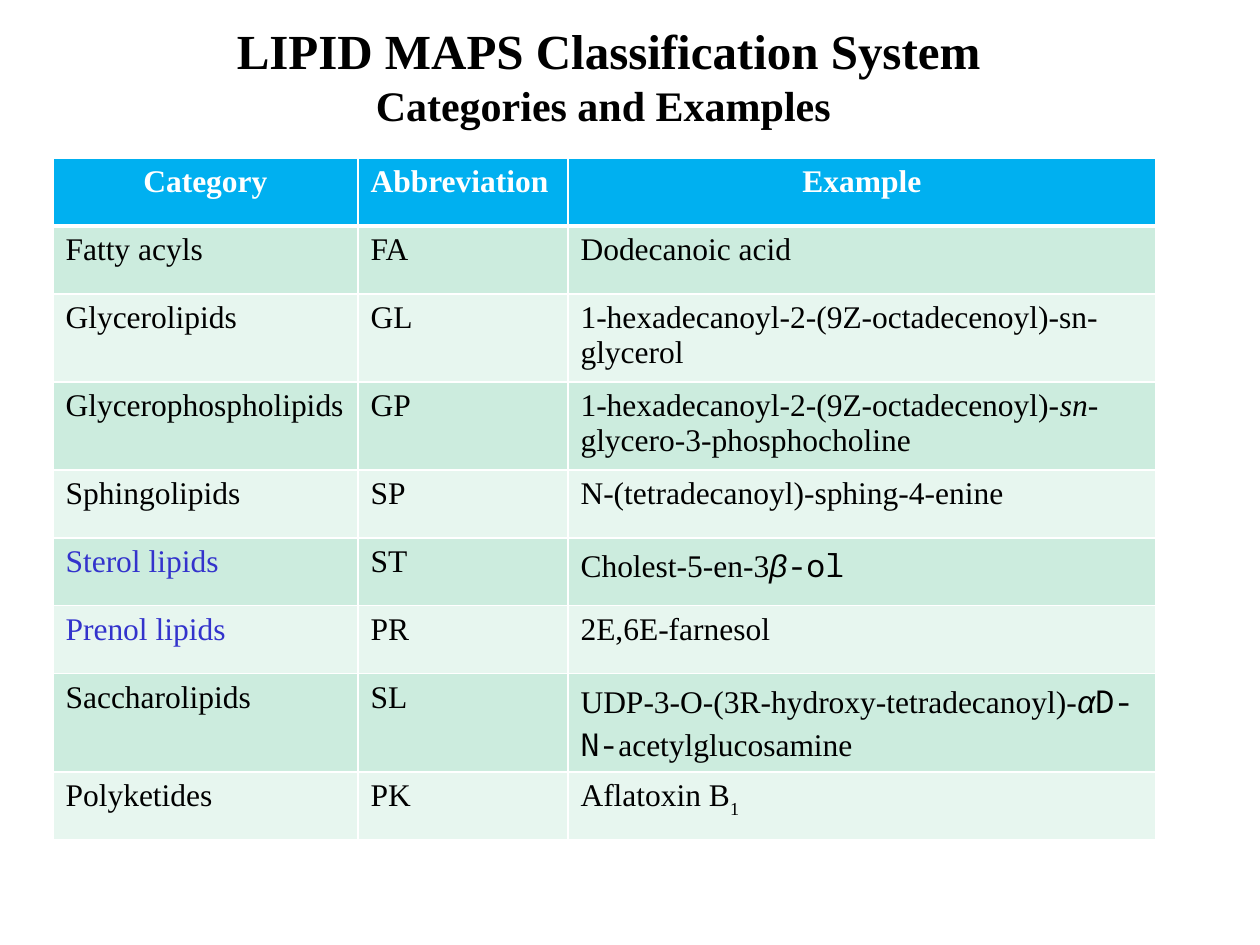
import dataclasses

import pptx
import pptx.dml.color
import pptx.enum.text
import pptx.oxml.ns
import pptx.util
from lxml import etree


@dataclasses.dataclass(frozen=True)
class Theme:
    serif: str = "Times New Roman"
    greek: str = "Arial"
    mono: str = "Noto Sans Mono"
    ink: str = "000000"
    white: str = "FFFFFF"
    accent: str = "3333CC"
    header: str = "00B0F0"
    dark_band: str = "CCECDE"
    light_band: str = "E7F6EF"
    title_size: int = 28
    subtitle_size: int = 24
    body_size: int = 18


THEME = Theme()
PX = 914400 / 126
CENTER = pptx.enum.text.PP_ALIGN.CENTER
LEFT = pptx.enum.text.PP_ALIGN.LEFT


def style_font(font, size, color, bold):
    font.name = THEME.serif
    font.size = pptx.util.Pt(size)
    font.bold = bold
    font.color.rgb = pptx.dml.color.RGBColor.from_string(color)


def add_borders(cell, top, bottom):
    properties = cell._tc.get_or_add_tcPr()
    widths = {"lnL": 1, "lnR": 1, "lnT": top, "lnB": bottom}
    for index, (side, width) in enumerate(widths.items()):
        line = etree.Element(pptx.oxml.ns.qn(f"a:{side}"), w=str(pptx.util.Pt(width)))
        fill = etree.SubElement(line, pptx.oxml.ns.qn("a:solidFill"))
        etree.SubElement(fill, pptx.oxml.ns.qn("a:srgbClr"), val=THEME.white)
        properties.insert(index, line)


deck = pptx.Presentation()
deck.slide_width = round(1260 * PX)
deck.slide_height = round(945 * PX)
page = deck.slides.add_slide(deck.slide_layouts[5])

title = page.shapes.title
title.left, title.top, title.width, title.height = (
    round(length * PX) for length in (73, 53, 1071, 44)
)
title.text_frame.auto_size = pptx.enum.text.MSO_AUTO_SIZE.NONE
title.text_frame.vertical_anchor = pptx.enum.text.MSO_ANCHOR.MIDDLE
para = title.text_frame.paragraphs[0]
para.alignment = CENTER
style_font(para.font, THEME.title_size, THEME.ink, True)
heading = para.add_run()
heading.text = "LIPID MAPS Classification System"
style_font(heading.font, THEME.title_size, THEME.ink, True)
para.add_line_break()
subheading = para.add_run()
subheading.text = "Categories and Examples "
style_font(subheading.font, THEME.subtitle_size, THEME.ink, True)

lipids = [
    ("Category", "Abbreviation", [("Example", "")]),
    ("Fatty acyls", "FA", [("Dodecanoic acid", "")]),
    ("Glycerolipids", "GL", [("1-hexadecanoyl-2-(9Z-octadecenoyl)-sn-glycerol", "")]),
    ("Glycerophospholipids", "GP", [
        ("1-hexadecanoyl-2-(9Z-octadecenoyl)-", ""),
        ("sn", "italic"),
        ("-glycero-3-phosphocholine", ""),
    ]),
    ("Sphingolipids", "SP", [("N-(tetradecanoyl)-sphing-4-enine", "")]),
    ("Sterol lipids", "ST", [("Cholest-5-en-3", ""), ("β", "greek"), ("-ol", "mono")]),
    ("Prenol lipids", "PR", [("2E,6E-farnesol", "")]),
    ("Saccharolipids", "SL", [
        ("UDP-3-O-(3R-hydroxy-tetradecanoyl)-", ""),
        ("α", "greek"),
        ("D-N-", "mono"),
        ("acetylglucosamine", ""),
    ]),
    ("Polyketides", "PK", [("Aflatoxin B", ""), ("1", "subscript")]),
]
column_widths = [305, 210, 588]
row_heights = [68, 68, 88, 88, 68, 68, 68, 88, 68]
accented = {"Sterol lipids", "Prenol lipids"}

table = page.shapes.add_table(
    len(lipids), len(column_widths),
    round(53 * PX), round(158 * PX),
    round(sum(column_widths) * PX), round(sum(row_heights) * PX),
).table
for column, width in zip(table.columns, column_widths):
    column.width = round(width * PX)
for row, height in zip(table.rows, row_heights):
    row.height = round(height * PX)

for row_index, (category, abbreviation, example) in enumerate(lipids):
    is_header = row_index == 0
    if is_header:
        band = THEME.header
    else:
        band = THEME.dark_band if row_index % 2 else THEME.light_band
    contents = [[(category, "")], [(abbreviation, "")], example]
    for column_index, spans in enumerate(contents):
        cell = table.cell(row_index, column_index)
        cell.fill.solid()
        cell.fill.fore_color.rgb = pptx.dml.color.RGBColor.from_string(band)
        add_borders(cell, 3 if row_index == 1 else 1, 3 if is_header else 1)
        para = cell.text_frame.paragraphs[0]
        para.alignment = CENTER if is_header and column_index != 1 else LEFT
        color = THEME.white if is_header else THEME.ink
        if spans[0][0] in accented:
            color = THEME.accent
        style_font(para.font, THEME.body_size, color, is_header)
        for text, kind in spans:
            span = para.add_run()
            span.text = text
            if kind in ("greek", "mono"):
                span.font.name = getattr(THEME, kind)
            if kind in ("italic", "greek"):
                span.font.italic = True
            if kind == "subscript":
                span.font._element.set("baseline", "-30000")

deck.save("out.pptx")
